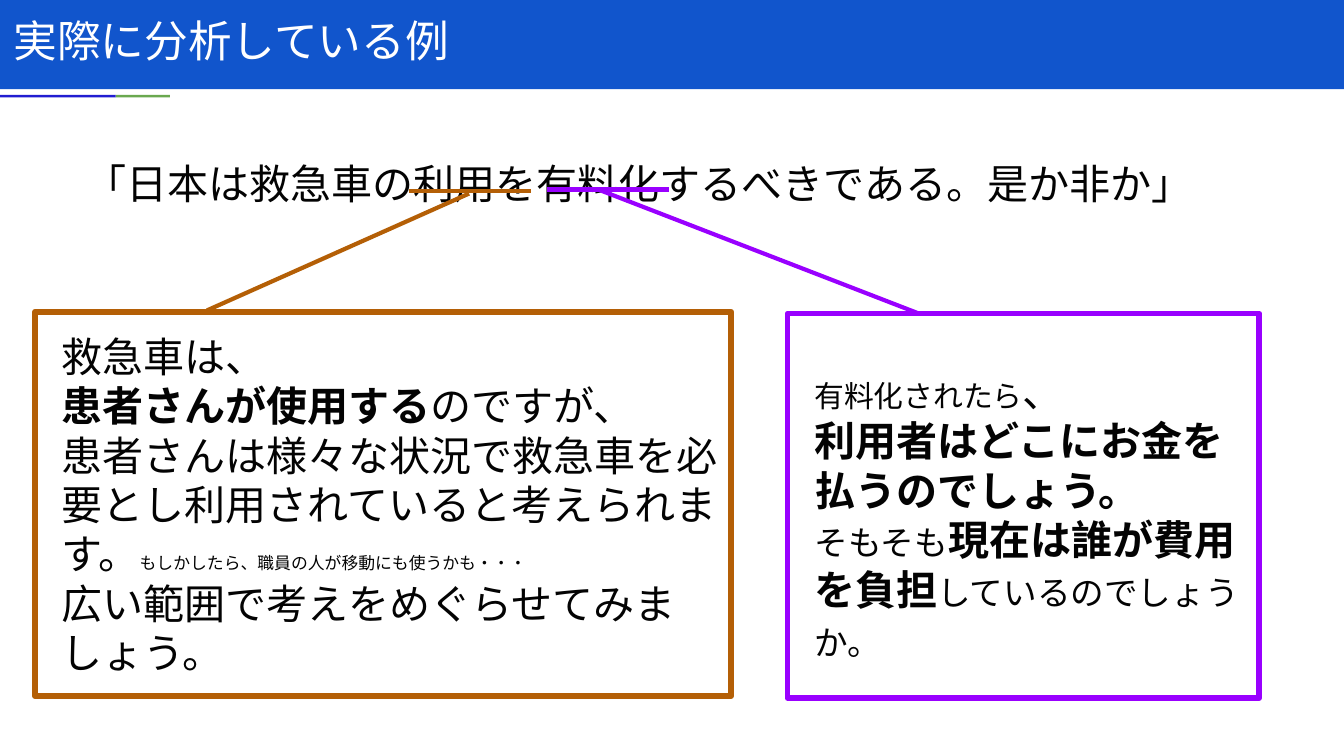
from lxml import etree
from pptx import Presentation
from pptx.dml.color import RGBColor
from pptx.enum.shapes import MSO_CONNECTOR, MSO_SHAPE
from pptx.enum.text import MSO_ANCHOR, PP_ALIGN
from pptx.oxml.ns import qn
from pptx.util import Pt

COLORS = {
    "header": "1155CC", "blue": "211DD1", "green": "6AA84F",
    "use": "B45F06", "fee": "9900FF", "text": "030303", "white": "FFFFFF",
}


class Deck:
    font = "Noto Sans CJK JP"
    inset = 7.2

    def __init__(self, prs):
        self.s = prs.slides.add_slide(prs.slide_layouts[5])

    def color(self, name):
        return RGBColor.from_string(COLORS[name])

    def run(self, p, text, size, bold=False, color="text"):
        """Add one run; a trailing newline becomes a line break."""
        r = p.add_run()
        r.text = text.rstrip("\n")
        r.font.name, r.font.size, r.font.bold = self.font, Pt(size), bold
        r.font.color.rgb = self.color(color)
        ea = etree.SubElement(r.font._element, qn("a:ea"))
        ea.set("typeface", self.font)
        if text.endswith("\n"):
            p.add_line_break()

    def set_text(self, tf, paragraphs, left=inset, top=inset,
                 anchor=MSO_ANCHOR.MIDDLE, spacing=None, color="text"):
        tf.word_wrap = True
        tf.vertical_anchor = anchor
        tf.margin_left, tf.margin_top = Pt(left), Pt(top)
        tf.margin_right = tf.margin_bottom = Pt(self.inset)
        for i, runs in enumerate(paragraphs):
            p = tf.add_paragraph() if i else tf.paragraphs[0]
            p.alignment = PP_ALIGN.LEFT
            if spacing:
                p.line_spacing = Pt(spacing)
            for text, size, *bold in runs:
                self.run(p, text, size, bool(bold), color)

    def title(self, text, x, y, w, h):
        sp = self.s.shapes.title
        sp.left, sp.top, sp.width, sp.height = Pt(x), Pt(y), Pt(w), Pt(h)
        self.set_text(sp.text_frame, [[(text, 23.4)]], color="white")
        # Bring the title in front of the header bar
        sp.element.getparent().append(sp.element)

    def bar(self, x, y, w, h, color):
        sp = self.rect(x, y, w, h)
        sp.fill.solid()
        sp.fill.fore_color.rgb = self.color(color)
        sp.line.fill.background()

    def rect(self, x, y, w, h):
        sp = self.s.shapes.add_shape(
            MSO_SHAPE.RECTANGLE, Pt(x), Pt(y), Pt(w), Pt(h))
        sp.shadow.inherit = False
        return sp

    def frame(self, x, y, w, h, color, paragraphs, **style):
        sp = self.rect(x, y, w, h)
        sp.fill.background()
        sp.line.color.rgb = self.color(color)
        sp.line.width = Pt(3)
        self.set_text(sp.text_frame, paragraphs, left=2 * self.inset,
                      spacing=26.5, **style)

    def text(self, x, y, w, h, paragraphs, **style):
        sp = self.s.shapes.add_textbox(Pt(x), Pt(y), Pt(w), Pt(h))
        self.set_text(sp.text_frame, paragraphs, **style)

    def line(self, x1, y1, x2, y2, color):
        c = self.s.shapes.add_connector(
            MSO_CONNECTOR.STRAIGHT, Pt(x1), Pt(y1), Pt(x2), Pt(y2))
        c.line.color.rgb = self.color(color)
        c.line.width = Pt(2.25)
        etree.SubElement(c.element.spPr, qn("a:effectLst"))


def main():
    prs = Presentation()
    prs.slide_width, prs.slide_height = Pt(720), Pt(405)
    d = Deck(prs)

    # Header with accent rule
    d.bar(0, 0, 720, 47.8, "header")
    d.bar(62, 50.8, 29, 1.4, "green")
    d.bar(0, 50.8, 62, 1.4, "blue")
    d.title("実際に分析している例", 0, 0, 605.5, 42.5)

    # Debate motion
    d.text(38.9, 71.3, 656.6, 42.5,
           [[("「日本は救急車の利用を有料化するべきである。是か非か」", 22)]],
           anchor=MSO_ANCHOR.TOP, spacing=32.5)

    # Who uses ambulances
    d.line(218.9, 102.2, 284.4, 102.2, "use")
    d.line(251.3, 103.7, 110.9, 166.3, "use")
    d.frame(18.7, 167, 373, 206, "use", [[
        ("救急車は、\n", 22),
        ("患者さんが使用する", 22, "bold"),
        ("のですが、\n", 22),
        ("患者さんは様々な状況で救急車を必要とし利用されていると考えられます。", 22),
        ("もしかしたら、職員の人が移動にも使うかも・・・\n", 9),
        ("広い範囲で考えをめぐらせてみましょう。", 22),
    ]])

    # Who pays the fee
    d.line(293, 101.5, 358.6, 101.5, "fee")
    d.line(320.4, 101.5, 491.8, 167.8, "fee")
    d.frame(421.9, 168, 252.7, 206, "fee", [
        [("有料化されたら", 16), ("、\n", 22),
         ("利用者はどこにお金を払うのでしょう。", 22, "bold")],
        [("そもそも", 18), ("現在は誰が費用を負担", 22, "bold"),
         ("しているのでしょうか。", 18)],
    ], top=28, anchor=MSO_ANCHOR.TOP)

    prs.save("out.pptx")


if __name__ == "__main__":
    main()
